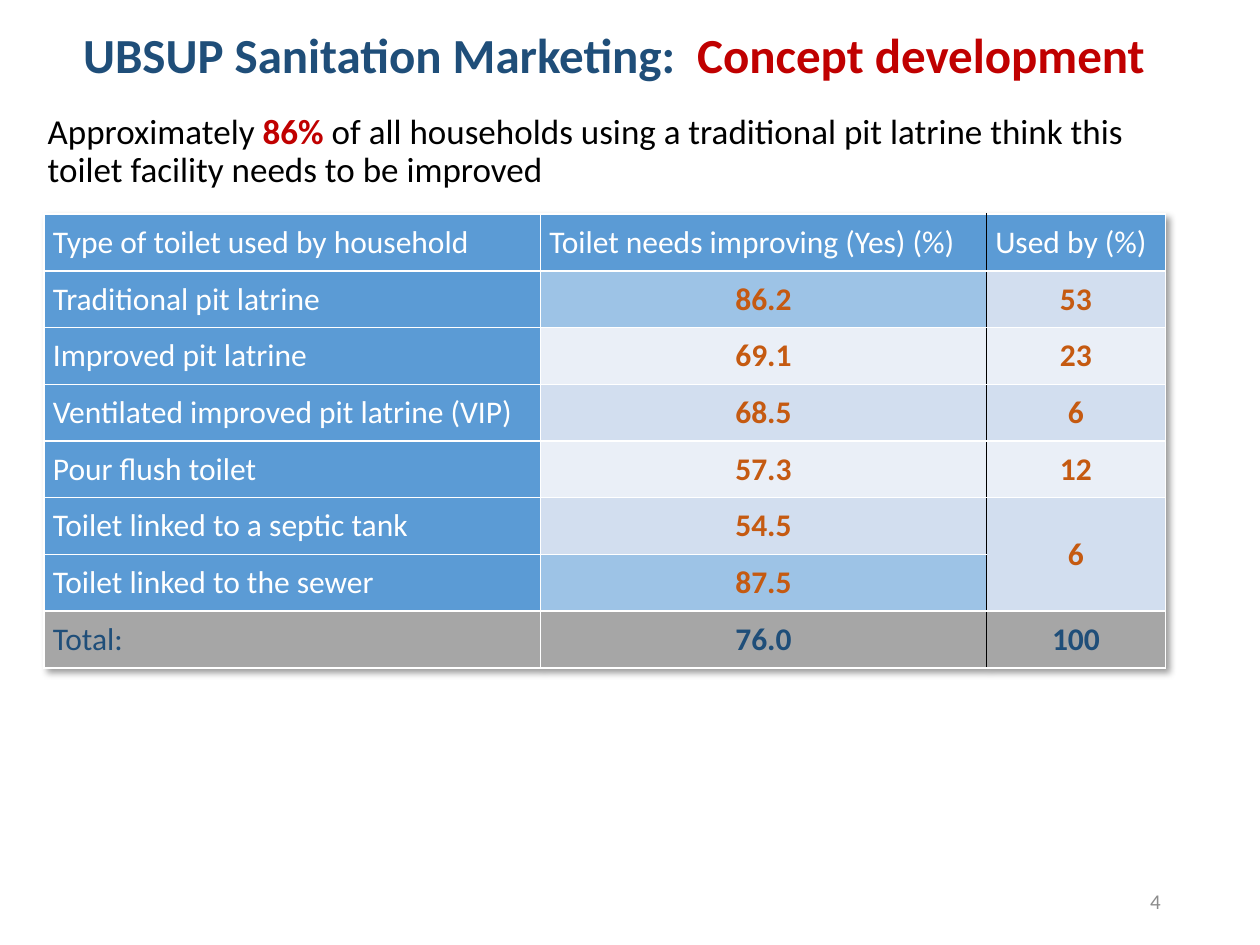
from lxml import etree
from pptx import Presentation
from pptx.dml.color import RGBColor
from pptx.enum.text import MSO_ANCHOR, PP_ALIGN
from pptx.oxml import parse_xml
from pptx.oxml.ns import nsdecls, qn
from pptx.util import Inches, Pt

LEFT, CENTER, RIGHT, JUSTIFY = (PP_ALIGN.LEFT, PP_ALIGN.CENTER,
                                PP_ALIGN.RIGHT, PP_ALIGN.JUSTIFY)
MIDDLE, TOP = MSO_ANCHOR.MIDDLE, MSO_ANCHOR.TOP

FONT = "Calibri"
NAVY = RGBColor(0x1F, 0x4E, 0x79)
RED = RGBColor(0xC0, 0x00, 0x00)
BLACK = RGBColor(0x00, 0x00, 0x00)
WHITE = RGBColor(0xFF, 0xFF, 0xFF)
NUMBER_GRAY = RGBColor(0x8C, 0x8C, 0x8C)
ORANGE = RGBColor(0xC5, 0x5A, 0x11)
BLUE = RGBColor(0x5B, 0x9B, 0xD5)
HIGHLIGHT = RGBColor(0x9D, 0xC3, 0xE6)
BANDS = (RGBColor(0xEA, 0xEF, 0xF7), RGBColor(0xD2, 0xDE, 0xEF))
TOTAL_GRAY = RGBColor(0xA6, 0xA6, 0xA6)

# Content: runs are (text, colour, bold)
TITLE = [("UBSUP Sanitation Marketing:  ", NAVY, True),
         ("Concept development", RED, True)]
FINDING = [("Approximately ", BLACK, False),
           ("86% ", RED, True),
           ("of all households using a traditional pit latrine think this "
            "toilet facility needs to be improved", BLACK, False)]
SLIDE_NUMBER = [("4", NUMBER_GRAY, False)]
ROWS = [
    ("Type of toilet used by household", "Toilet needs improving (Yes) (%)",
     "Used by (%)"),
    ("Traditional pit latrine", "86.2", "53"),
    ("Improved pit latrine", "69.1", "23"),
    ("Ventilated improved pit latrine (VIP)", "68.5", "6"),
    ("Pour flush toilet", "57.3", "12"),
    ("Toilet linked to a septic tank", "54.5", "6"),
    ("Toilet linked to the sewer", "87.5", ""),
    ("Total:", "76.0", "100"),
]
HIGHLIGHTED = ("86.2", "87.5")
MERGED_ROWS = (5, 6)  # the last column shares one value here
COL_WIDTHS = (3.94, 3.54, 1.42)
ROW_HEIGHT = 0.45


def write(tf, runs, size, align=LEFT, spacing=None):
    p = tf.paragraphs[0]
    p.alignment = align
    if spacing:
        p.line_spacing = spacing
    for text, color, bold in runs:
        r = p.add_run()
        r.text = text
        r.font.name = FONT
        r.font.size = Pt(size)
        r.font.bold = bold
        r.font.color.rgb = color


def add_text(slide, box, runs, size, anchor=TOP, **fmt):
    tf = slide.shapes.add_textbox(*map(Inches, box)).text_frame
    tf.word_wrap = True
    tf.vertical_anchor = anchor
    write(tf, runs, size, **fmt)


def set_borders(cell, colors):
    tc_pr = cell._tc.get_or_add_tcPr()
    for side, color in zip("LRTB", colors):
        ln = etree.SubElement(tc_pr, qn(f"a:ln{side}"), w=str(Pt(1)))
        fill = etree.SubElement(ln, qn("a:solidFill"))
        etree.SubElement(fill, qn("a:srgbClr"), val=str(color))


def cell_style(row, col, text):
    """Return fill, text colour, bold and alignment of a cell."""
    align = JUSTIFY if row == 0 or col == 0 else CENTER
    if row == len(ROWS) - 1:
        return TOTAL_GRAY, NAVY, col > 0, align
    if row == 0 or col == 0:
        return BLUE, WHITE, False, align
    fill = HIGHLIGHT if text in HIGHLIGHTED else BANDS[row % 2]
    return fill, ORANGE, True, align


prs = Presentation()
prs.slide_width, prs.slide_height = Inches(10), Inches(7.5)
slide = prs.slides.add_slide(prs.slide_layouts[5])

# Title
title = slide.shapes.title
title.left, title.top, title.width, title.height = map(
    Inches, (0.56, 0, 9.22, 0.92))
title.text_frame.vertical_anchor = MIDDLE
write(title.text_frame, TITLE, 28, spacing=0.9)

# Key finding and slide number
add_text(slide, (0.28, 0.86, 9.21, 0.75), FINDING, 20, spacing=0.9)
add_text(slide, (7.06, 6.95, 2.25, 0.4), SLIDE_NUMBER, 12,
         anchor=MIDDLE, align=RIGHT)

# Table with a soft shadow
table = slide.shapes.add_table(
    len(ROWS), len(COL_WIDTHS), Inches(0.35), Inches(1.7),
    Inches(sum(COL_WIDTHS)), Inches(ROW_HEIGHT * len(ROWS))).table
table._tbl.tblPr.insert(0, parse_xml(
    f'<a:effectLst {nsdecls("a")}>'
    '<a:outerShdw blurRad="50800" dist="38100" dir="2700000" algn="tl" '
    'rotWithShape="0"><a:srgbClr val="000000"><a:alpha val="40000"/>'
    '</a:srgbClr></a:outerShdw></a:effectLst>'))
for column, width in zip(table.columns, COL_WIDTHS):
    column.width = Inches(width)

last_col = len(COL_WIDTHS) - 1
for i, row in enumerate(ROWS):
    table.rows[i].height = Inches(ROW_HEIGHT)
    for j, text in enumerate(row):
        cell = table.cell(i, j)
        fill, color, bold, align = cell_style(i, j, text)
        set_borders(cell, (BLACK if j == last_col else WHITE,
                           BLACK if j == last_col - 1 else WHITE,
                           WHITE, WHITE))
        cell.fill.solid()
        cell.fill.fore_color.rgb = fill
        cell.margin_left = cell.margin_right = Inches(0.07)
        cell.margin_top = cell.margin_bottom = 0
        cell.vertical_anchor = MIDDLE
        if text:
            write(cell.text_frame, [(text, color, bold)], 18, align=align)
first, last = MERGED_ROWS
table.cell(first, last_col).merge(table.cell(last, last_col))

prs.save("out.pptx")
